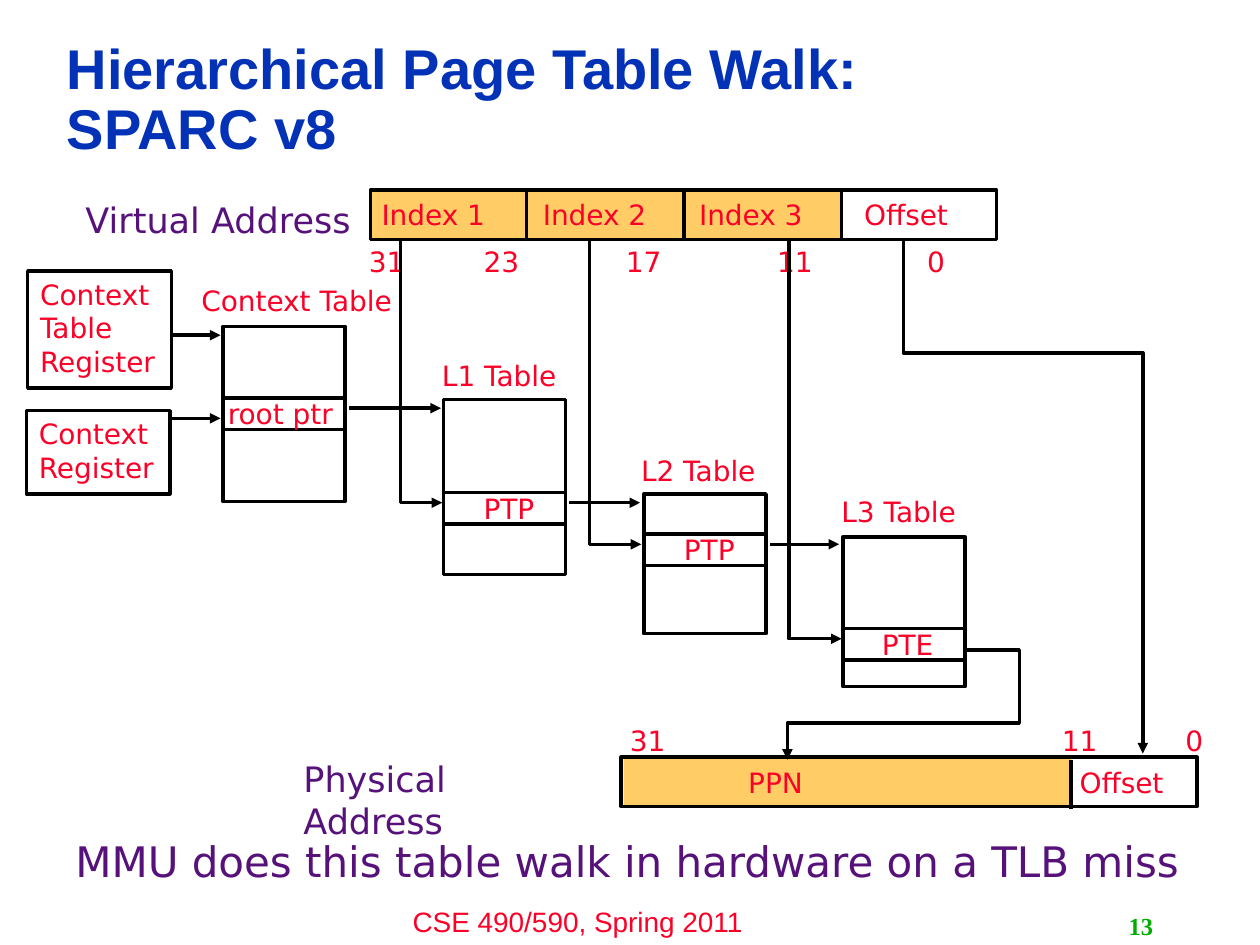
from lxml import etree
from pptx import Presentation
from pptx import util as u
from pptx.dml.color import RGBColor
from pptx.enum import shapes, text
from pptx.oxml import ns

COLORS = {"title": "0332B7", "label": "FC0128", "caption": "56127A",
          "line": "000000", "field": "FFCC66", "table": "FFFFFF", "number": "00AE00"}
BODY_FONT = "DejaVu Sans"
TABLE_WIDTH, SLOT_HEIGHT, FIELD_HEIGHT = 0.97, 0.25, 0.39

# caption, caption position, table left, top, height, entry top, entry text, text left
TABLES = [
    ("Context Table", (1.5, 2.2, 1.75), 1.77, 2.59, 1.39, 3.16, "root ptr", 1.71, 1.05),
    ("L1 Table", (3.41, 2.8, 1.14), 3.52, 3.17, 1.39, 3.91, "PTP", 3.74, 0.6),
    ("L2 Table", (4.99, 3.55, 1.14), 5.11, 3.92, 1.11, 4.24, "PTP", 5.33, 0.6),
    ("L3 Table", (6.58, 3.88, 1.14), 6.69, 4.26, 1.19, 4.99, "PTE", 6.9, 0.61),
]
# left, top, width, height, lines
REGISTERS = [
    (0.22, 2.15, 1.14, 0.93, ["Context", "Table", "Register"]),
    (0.21, 3.26, 1.14, 0.66, ["Context", "Register"]),
]
# from x, to x, y
POINTERS = [(1.36, 1.75, 2.66), (1.36, 1.75, 3.32), (2.77, 3.5, 3.24),
            (4.52, 5.08, 3.99), (6.11, 6.66, 4.32)]
ROUTES = [
    [(3.18, 1.91), (3.18, 3.99), (3.51, 3.99)],
    [(4.68, 1.91), (4.68, 4.32), (5.09, 4.32)],
    [(6.26, 1.91), (6.26, 5.07), (6.68, 5.07)],
    [(7.17, 1.89), (7.17, 2.8), (9.07, 2.8), (9.07, 5.98)],
    [(7.67, 5.16), (8.09, 5.16), (8.09, 5.74), (6.25, 5.74), (6.25, 6.03)],
]


def inch(value):
    return u.Cm(value * 2.54)


def color(name):
    return RGBColor.from_string(COLORS[name])


def write(frame, lines, size, tone, font=BODY_FONT, bold=False,
          align=text.PP_ALIGN.LEFT, wrap=False):
    frame.word_wrap = wrap
    for index, line in enumerate(lines):
        paragraph = frame.paragraphs[0] if index == 0 else frame.add_paragraph()
        paragraph.alignment = align
        run = paragraph.add_run()
        run.text = line
        run.font.name, run.font.size, run.font.bold = font, u.Pt(size), bold
        run.font.color.rgb = color(tone)


def add_label(slide, wording, left, top, width, height=0.36, size=16, tone="label", **style):
    label = slide.shapes.add_textbox(inch(left), inch(top), inch(width), inch(height))
    write(label.text_frame, [wording], size, tone, **style)
    return label


def add_tabbed_row(slide, words, left, top, width, stops):
    """One line of words, each after the first starting at a tab stop."""
    row = add_label(slide, "\t".join(words), left, top, width, wrap=True)
    properties = row.text_frame.paragraphs[0]._p.get_or_add_pPr()
    tabs = etree.SubElement(properties, ns.qn("a:tabLst"))
    for stop in stops:
        etree.SubElement(tabs, ns.qn("a:tab"), pos=str(int(inch(stop))), algn="l")


def style_line(line):
    line.color.rgb = color("line")
    line.width = u.Pt(2)


def add_arrowhead(line):
    etree.SubElement(line._get_or_add_ln(), ns.qn("a:tailEnd"), type="triangle")


def add_box(slide, left, top, width, height, fill=None, outline=True):
    box = slide.shapes.add_shape(shapes.MSO_SHAPE.RECTANGLE, inch(left), inch(top),
                                 inch(width), inch(height))
    box.shadow.inherit = False
    if fill:
        box.fill.solid()
        box.fill.fore_color.rgb = color(fill)
    else:
        box.fill.background()
    if outline:
        style_line(box.line)
    else:
        box.line.fill.background()
    return box


def add_line(slide, start, end, arrow=False):
    line = slide.shapes.add_connector(shapes.MSO_CONNECTOR.STRAIGHT,
                                      *map(inch, start), *map(inch, end))
    style_line(line.line)
    if arrow:
        add_arrowhead(line.line)
    etree.SubElement(line._element.spPr, ns.qn("a:effectLst"))


def add_route(slide, points):
    start, *rest = [(inch(x), inch(y)) for x, y in points]
    builder = slide.shapes.build_freeform(*start)
    builder.add_line_segments(rest, close=False)
    route = builder.convert_to_shape()
    route.shadow.inherit = False
    route.fill.background()
    style_line(route.line)
    add_arrowhead(route.line)


def add_page_table(slide, caption, caption_at, left, top, height,
                   entry_top, entry, entry_left, entry_width):
    add_box(slide, left, top, TABLE_WIDTH, height, "table")
    for y in (entry_top, entry_top + SLOT_HEIGHT):
        add_line(slide, (left, y), (left + TABLE_WIDTH, y))
    add_label(slide, entry, entry_left, entry_top - 0.06, entry_width)
    add_label(slide, caption, *caption_at)


def add_title(slide):
    title = slide.shapes.title
    title.left, title.top, title.width, title.height = map(inch, (0.43, 0.18, 7.83, 1.25))
    frame = title.text_frame
    frame.auto_size = text.MSO_AUTO_SIZE.NONE
    frame.vertical_anchor = text.MSO_ANCHOR.MIDDLE
    write(frame, ["Hierarchical Page Table Walk: SPARC v8"], 32, "title",
          font="Arial", bold=True, wrap=True)
    frame.paragraphs[0].line_spacing = 0.9


def add_virtual_address(slide):
    add_box(slide, 2.93, 1.5, 3.74, FIELD_HEIGHT, "field", outline=False)
    add_label(slide, "Virtual Address", 0.58, 1.53, 2.32, 0.43, 20, "caption")
    add_box(slide, 2.94, 1.51, 4.97, FIELD_HEIGHT)
    for field in range(3):
        x = 4.18 + 1.25 * field
        add_line(slide, (x, 1.51), (x, 1.89))
    add_tabbed_row(slide, ["Index 1", "Index 2", "Index 3", "Offset"],
                   2.93, 1.52, 4.9, [1.28, 2.52, 3.83])
    add_tabbed_row(slide, ["31", "23", "17", "11", "0"],
                   2.83, 1.89, 5.14, [0.91, 2.04, 3.24, 4.43])


def add_physical_address(slide):
    add_tabbed_row(slide, ["31", "11", "0"], 4.9, 5.69, 4.85, [3.43, 4.41])
    add_box(slide, 4.95, 6.02, 3.55, FIELD_HEIGHT, "field", outline=False)
    add_box(slide, 4.93, 6.01, 4.57, FIELD_HEIGHT)
    add_line(slide, (8.5, 6.03), (8.5, 6.42))
    add_label(slide, "Physical Address", 2.31, 5.96, 2.2, 0.43, 20, "caption", wrap=True)
    add_tabbed_row(slide, ["PPN", "Offset"], 5.84, 6.03, 3.57, [2.63])


def main():
    deck = Presentation()
    deck.slide_width, deck.slide_height = inch(10), inch(7.5)
    slide = deck.slides.add_slide(deck.slide_layouts[5])
    add_title(slide)

    # Address words
    add_physical_address(slide)
    add_virtual_address(slide)

    # Registers and tables
    for *place, lines in REGISTERS:
        register = add_box(slide, *place)
        register.text_frame.vertical_anchor = text.MSO_ANCHOR.TOP
        write(register.text_frame, lines, 16, "label")
    for table in TABLES:
        add_page_table(slide, *table)

    # Pointers and routes
    for start, end, y in POINTERS:
        add_line(slide, (start, y), (end, y), arrow=True)
    for points in ROUTES:
        add_route(slide, points)

    # Conclusion and footer
    add_label(slide, "MMU does this table walk in hardware on a TLB miss",
              0.5, 6.58, 9.03, 0.5, 24, "caption")
    add_label(slide, "CSE 490/590, Spring 2011", 2.92, 7.13, 3.33, 0.37,
              font="Arial", align=text.PP_ALIGN.CENTER, wrap=True)
    add_label(slide, "13", 7.17, 7.18, 2.08, 0.32, 14, "number", font="Times New Roman",
              bold=True, align=text.PP_ALIGN.RIGHT, wrap=True)

    deck.save("out.pptx")


if __name__ == "__main__":
    main()
